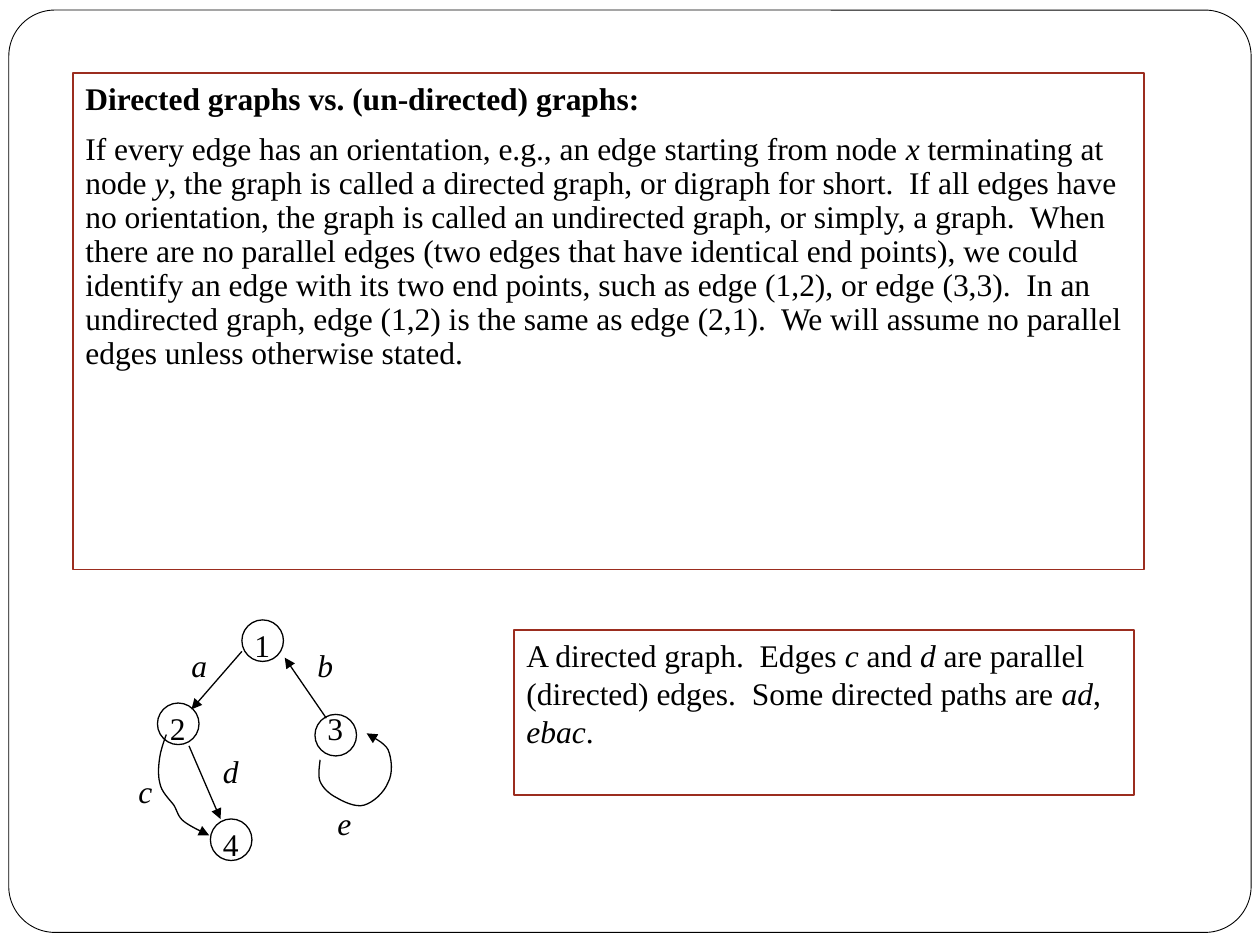
from dataclasses import dataclass

from lxml.etree import SubElement as Sub
from pptx import Presentation
from pptx.dml.color import RGBColor as RGB
from pptx.enum.shapes import MSO_CONNECTOR as Conn, MSO_SHAPE as Kind
from pptx.enum.text import MSO_ANCHOR as Anchor, PP_ALIGN as Align
from pptx.oxml.ns import qn
from pptx.util import Inches, Pt


@dataclass(frozen=True)
class Theme:
    ink: RGB = RGB(0, 0, 0)
    rust: RGB = RGB(0x9B, 0x2D, 0x1F)
    paper: RGB = RGB(255, 255, 255)
    font: str = "Times New Roman"
    size: int = 18
    thin: float = 0.5
    line: float = 0.75


THEME = Theme()
PARA = {"alignment": Align.LEFT, "space_before": Pt(9)}
FONT = {"name": THEME.font, "size": Pt(THEME.size)}
FRAME = {"word_wrap": True, "vertical_anchor": Anchor.TOP}

HEAD = "Directed graphs vs. (un-directed) graphs:"
BODY = (
    "If every edge has an orientation, e.g., an edge starting from node *x* "
    "terminating at node *y*, the graph is called a directed graph, or digraph "
    "for short.  If all edges have no orientation, the graph is called an "
    "undirected graph, or simply, a graph.  When there are no parallel edges "
    "(two edges that have identical end points), we could identify an edge with "
    "its two end points, such as edge (1,2), or edge (3,3).  In an undirected "
    "graph, edge (1,2) is the same as edge (2,1).  We will assume no parallel "
    "edges unless otherwise stated."
)
NOTE = (
    "A directed graph.  Edges *c* and *d* are parallel (directed) edges.  "
    "Some directed paths are *ad*, *ebac*."
)

NODES = [(1.92, 4.92), (1.25, 5.58), (2.5, 5.67), (1.67, 6.5)]
EDGES = [
    (1.92, 5.17, 1.52, 5.63),
    (2.59, 5.7, 2.26, 5.22),
    (1.5, 5.92, 1.75, 6.5),
]
LOOP = [
    (2.54, 6.03), (2.54, 6.06), (2.52, 6.15), (2.54, 6.2),
    (2.56, 6.25), (2.61, 6.3), (2.67, 6.33),
    (2.72, 6.36), (2.82, 6.41), (2.89, 6.39),
    (2.96, 6.37), (3.05, 6.29), (3.08, 6.21),
    (3.12, 6.14), (3.11, 6.02), (3.08, 5.95),
    (3.05, 5.89), (2.95, 5.85), (2.91, 5.82),
]
BEND = [
    (1.32, 5.83), (1.31, 5.86), (1.28, 5.94), (1.27, 6),
    (1.26, 6.06), (1.25, 6.15), (1.27, 6.22),
    (1.28, 6.28), (1.34, 6.34), (1.38, 6.39),
    (1.41, 6.44), (1.41, 6.48), (1.46, 6.52),
    (1.51, 6.56), (1.62, 6.61), (1.66, 6.63),
]
LABELS = [
    ("1", 1.92, 4.92, 0.42), ("2", 1.25, 5.58, 0.33),
    ("3", 2.5, 5.58, 0.33), ("4", 1.67, 6.5, 0.5),
    ("*a*", 1.42, 5.08, 0.42), ("*b*", 2.42, 5.08, 0.42),
    ("*c*", 1, 6.08, 0.58), ("*d*", 1.67, 5.92, 0.33),
    ("*e*", 2.58, 6.33, 0.67),
]


def style(obj, vals):
    for key, val in vals.items():
        setattr(obj, key, val)


def stroke(item, color=THEME.ink, width=THEME.line):
    item.line.color.rgb = color
    item.line.width = Pt(width)


def tip(item):
    Sub(item.line._get_or_add_ln(), qn("a:tailEnd"), type="triangle")


def shape(slide, kind, box, color=THEME.ink, width=THEME.line):
    item = slide.shapes.add_shape(kind, *map(Inches, box))
    item.shadow.inherit = False
    item.fill.background()
    stroke(item, color, width)
    return item


def fill_para(para, text, bold=False):
    style(para, PARA)
    for i, part in enumerate(text.split("*")):
        if part:
            run = para.add_run()
            run.text = part
            style(run.font, FONT | {"bold": bold, "italic": i % 2 == 1})
            run.font.color.rgb = THEME.ink


def write(item, text, bold=False):
    frame = item.text_frame
    style(frame, FRAME)
    fill_para(frame.paragraphs[0], text, bold)
    return frame


def label(slide, text, x, y, w):
    write(slide.shapes.add_textbox(*map(Inches, (x, y, w, 0.4))), text)


def arrow(slide, ends):
    item = slide.shapes.add_connector(Conn.STRAIGHT, *map(Inches, ends))
    stroke(item)
    tip(item)
    Sub(item._element.spPr, qn("a:effectLst"))


def bezier(a, b, c, d, t):
    s = 1 - t
    return tuple(
        Inches(s**3 * p + 3 * s * s * t * q + 3 * s * t * t * r + t**3 * v)
        for p, q, r, v in zip(a, b, c, d)
    )


def curve(slide, pts, steps=8):
    path = [
        bezier(*pts[i:i + 4], k / steps)
        for i in range(0, len(pts) - 1, 3)
        for k in range(1, steps + 1)
    ]
    pen = slide.shapes.build_freeform(*map(Inches, pts[0]))
    pen.add_line_segments(path, close=False)
    item = pen.convert_to_shape()
    item.shadow.inherit = False
    item.fill.background()
    stroke(item)
    tip(item)


def main():
    deck = Presentation()
    style(deck, {"slide_width": Inches(10), "slide_height": Inches(7.5)})
    slide = deck.slides.add_slide(deck.slide_layouts[6])

    border = shape(slide, Kind.ROUNDED_RECTANGLE, (0.07, 0.08, 9.86, 7.32), width=THEME.thin)
    border.adjustments[0] = 0.05
    border.fill.solid()
    border.fill.fore_color.rgb = THEME.paper

    frame = write(shape(slide, Kind.RECTANGLE, (0.58, 0.58, 8.5, 3.94), THEME.rust), HEAD, True)
    para = frame.add_paragraph()
    fill_para(para, BODY)
    para.line_spacing = 0.9

    for ends in EDGES:
        arrow(slide, ends)
    for pts in (LOOP, BEND):
        curve(slide, pts)
    for x, y in NODES:
        shape(slide, Kind.OVAL, (x, y, 0.33, 0.33))
    for row in LABELS:
        label(slide, *row)

    write(shape(slide, Kind.RECTANGLE, (4.08, 5, 4.92, 1.31), THEME.rust), NOTE)
    deck.save("out.pptx")


if __name__ == "__main__":
    main()
